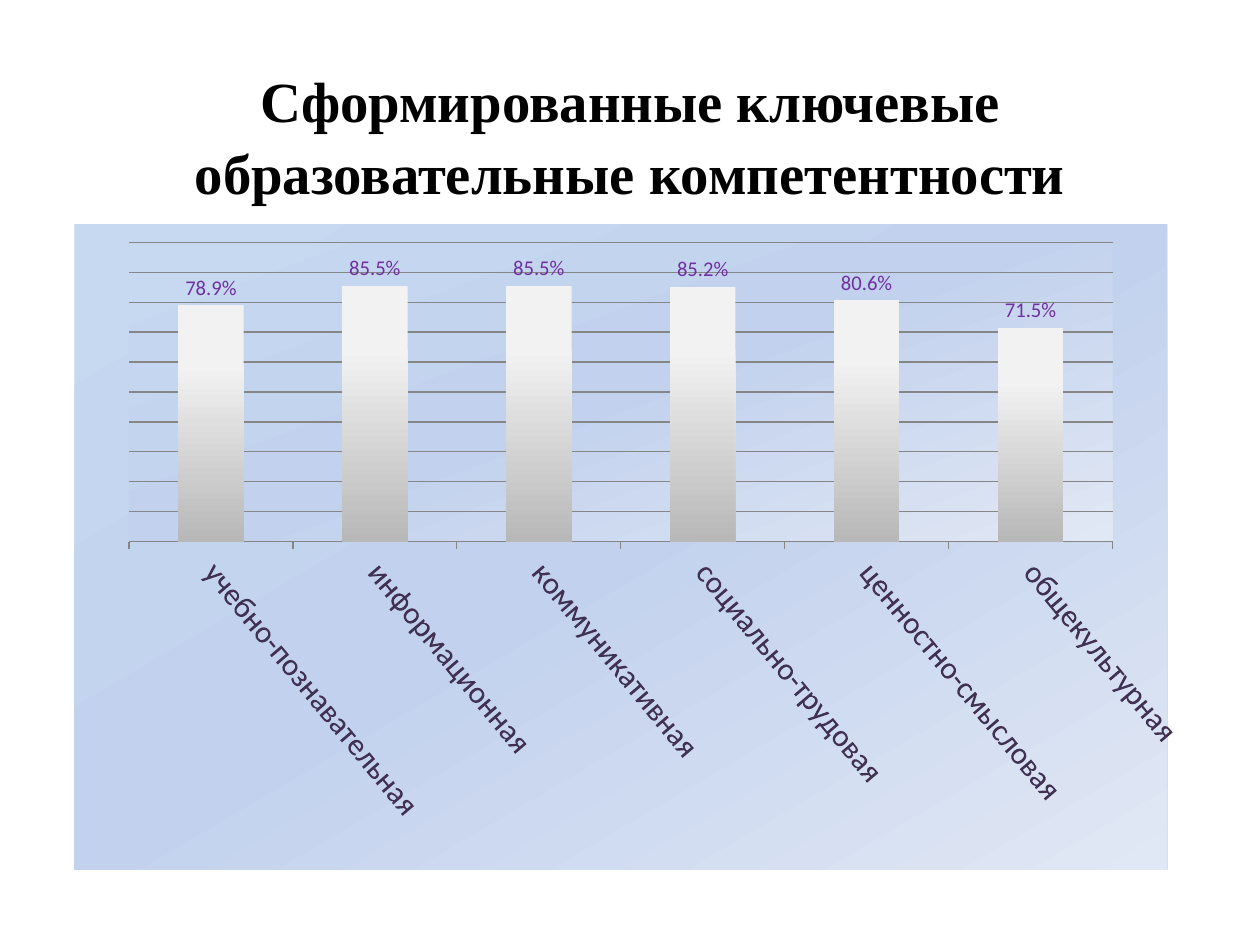
import pptx
import pptx.chart.data
import pptx.dml.color
import pptx.enum.chart
import pptx.enum.text
import pptx.oxml
import pptx.oxml.ns
import pptx.util
from pptx.util import Pt

TITLE = "Сформированные ключевые образовательные компетентности\v"
COMPETENCES = [
    ("учебно-познавательная", 0.789),
    ("информационная", 0.855),
    ("коммуникативная", 0.855),
    ("социально-трудовая", 0.852),
    ("ценностно-смысловая", 0.806),
    ("общекультурная", 0.715),
]
COLORS = {"title": "000000", "value": "7030A0", "category": "403152", "line": "868686"}
BACKDROP = [(0, "C6D9F1"), (50, "C2D1ED"), (100, "E1E8F5")]
BAR = [(0, "F2F2F2"), (25, "F2F2F2"), (100, "B8B8B8")]
PLOT_LAYOUT = {"x": 0.05, "y": 0.028, "w": 0.9, "h": 0.464}
TITLE_BOX = (36, 54.7, 648, 96.5)
CHART_BOX = (42.5, 128.2, 635, 368.6)
CATEGORY_ANGLE = 50


def rgb(name):
    return pptx.dml.color.RGBColor.from_string(COLORS[name])


def format_font(font, name, size, color, bold=False):
    font.name = name
    font.size = Pt(size)
    font.bold = bold
    font.color.rgb = rgb(color)


def write_text(text_frame, text, align, spacing, **font_format):
    text_frame.text = text
    paragraph = text_frame.paragraphs[0]
    paragraph.alignment = align
    paragraph.line_spacing = spacing
    for run in paragraph.runs:
        format_font(run.font, **font_format)


def gradient_properties(stops, angle):
    stop_xml = "".join(
        f'<a:gs pos="{position * 1000}"><a:srgbClr val="{color}"/></a:gs>'
        for position, color in stops
    )
    return pptx.oxml.parse_xml(
        f'<c:spPr {pptx.oxml.ns.nsdecls("c", "a")}><a:gradFill><a:gsLst>{stop_xml}</a:gsLst>'
        f'<a:lin ang="{angle * 60000}" scaled="0"/></a:gradFill><a:ln><a:noFill/></a:ln></c:spPr>'
    )


def set_plot_layout(plot_area):
    for layout in plot_area.findall(pptx.oxml.ns.qn("c:layout")):
        plot_area.remove(layout)
    modes = "".join(f'<c:{axis}Mode val="edge"/>' for axis in "xy")
    sizes = "".join(f'<c:{key} val="{value}"/>' for key, value in PLOT_LAYOUT.items())
    plot_area.insert(0, pptx.oxml.parse_xml(
        f'<c:layout {pptx.oxml.ns.nsdecls("c")}><c:manualLayout>'
        f'<c:layoutTarget val="inner"/>{modes}{sizes}</c:manualLayout></c:layout>'
    ))


def add_competence_chart(slide):
    data = pptx.chart.data.CategoryChartData(number_format="0.0%")
    data.categories = [name for name, value in COMPETENCES]
    data.add_series("Series 1", [value for name, value in COMPETENCES])
    chart = slide.shapes.add_chart(
        pptx.enum.chart.XL_CHART_TYPE.COLUMN_CLUSTERED, *map(Pt, CHART_BOX), data
    ).chart
    chart.has_legend = False
    chart.has_title = False
    format_font(chart.font, "Calibri", 12, "value")

    plot = chart.plots[0]
    plot.gap_width = 150
    plot.vary_by_categories = False
    plot.has_data_labels = True
    labels = plot.data_labels
    labels.show_value = True
    labels.number_format = "0.0%"
    labels.number_format_is_linked = False
    labels.position = pptx.enum.chart.XL_LABEL_POSITION.OUTSIDE_END
    format_font(labels.font, "Calibri", 12, "value")
    fill = plot.series[0].format.fill
    fill.gradient()
    series_properties = plot.series[0].format.fill._xPr
    series_properties.getparent().replace(series_properties, gradient_properties(BAR, 90))

    value_axis = chart.value_axis
    value_axis.minimum_scale = 0
    value_axis.maximum_scale = 1
    value_axis.major_unit = 0.1
    value_axis.visible = False
    value_axis.has_major_gridlines = True
    value_axis.major_gridlines.format.line.color.rgb = rgb("line")
    value_axis.major_gridlines.format.line.width = Pt(0.75)

    category_axis = chart.category_axis
    category_axis.major_tick_mark = pptx.enum.chart.XL_TICK_MARK.OUTSIDE
    category_axis.format.line.color.rgb = rgb("line")
    format_font(category_axis.tick_labels.font, "Calibri", 18, "category")
    body = category_axis._element.find(".//" + pptx.oxml.ns.qn("a:bodyPr"))
    body.set("rot", str(CATEGORY_ANGLE * 60000))
    body.set("vert", "horz")

    chart_space = chart._chartSpace
    plot_area = chart_space.chart.plotArea
    set_plot_layout(plot_area)
    plot_area.append(gradient_properties(BACKDROP, 70))
    chart_space.chart.addnext(gradient_properties(BACKDROP, 60))


def main():
    presentation = pptx.Presentation()
    presentation.slide_width = Pt(720)
    presentation.slide_height = Pt(540)
    slide = presentation.slides.add_slide(presentation.slide_layouts[5])
    title = slide.shapes.title
    title.left, title.top, title.width, title.height = map(Pt, TITLE_BOX)
    title.text_frame.word_wrap = True
    title.text_frame.vertical_anchor = pptx.enum.text.MSO_ANCHOR.MIDDLE
    write_text(title.text_frame, TITLE, pptx.enum.text.PP_ALIGN.CENTER, 1.05,
               name="Times New Roman", size=32.4, color="title", bold=True)
    add_competence_chart(slide)
    presentation.save("out.pptx")


if __name__ == "__main__":
    main()
